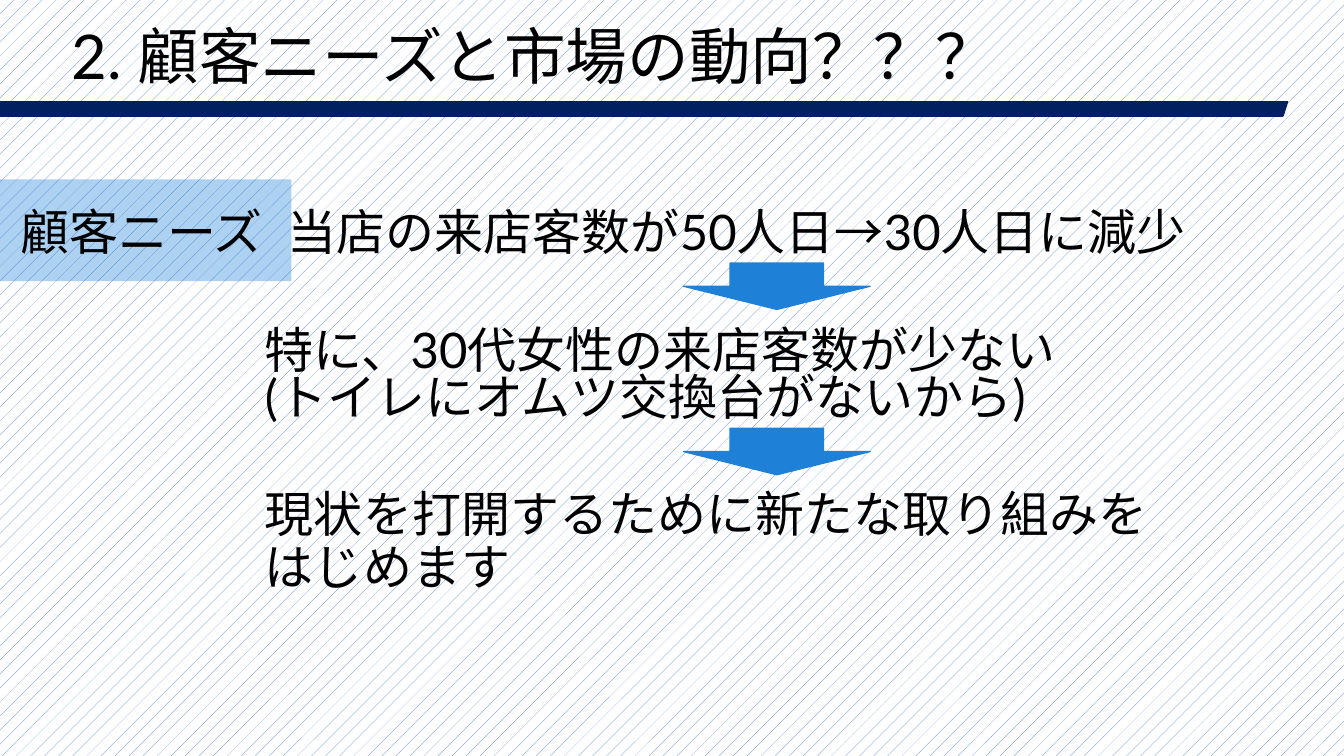
from lxml import etree
from pptx import Presentation
from pptx import util as u
from pptx.dml.color import RGBColor
from pptx.enum import dml, shapes, text
from pptx.oxml.ns import qn


def colour(hex_code):
    return RGBColor.from_string(hex_code)


class SlideBuilder:
    font = "Lato"
    ink = "000000"
    navy = "002060"
    blue = "1E80D7"

    def __init__(self, deck):
        self.slide = deck.slides.add_slide(deck.slide_layouts[5])

    def background(self, front, back):
        fill = self.slide.background.fill
        fill.patterned()
        fill.pattern = dml.MSO_PATTERN.PERCENT_5
        fill.fore_color.rgb = colour(front)
        fill.back_color.rgb = colour(back)

    def set_lines(self, box, lines, size, spacing):
        frame = box.text_frame
        frame.text = "\n".join(lines)
        frame.word_wrap = True
        frame.auto_size = text.MSO_AUTO_SIZE.NONE
        frame.vertical_anchor = text.MSO_ANCHOR.MIDDLE
        for para in frame.paragraphs:
            para.alignment = text.PP_ALIGN.LEFT
            para.line_spacing = spacing
            for span in para.runs:
                span.font.name = self.font
                span.font.size = u.Pt(size)
                span.font.color.rgb = colour(self.ink)

    def title(self, wording, left, top, width, height):
        box = self.slide.shapes.title
        box.left, box.top = u.Inches(left), u.Inches(top)
        box.width, box.height = u.Inches(width), u.Inches(height)
        self.set_lines(box, [wording], 44, 0.9)

    def text_box(self, lines, left, top, width, height, spacing=0.9):
        box = self.slide.shapes.add_textbox(
            u.Inches(left), u.Inches(top), u.Inches(width), u.Inches(height))
        self.set_lines(box, lines, 35, spacing)
        return box

    def tab_stop(self, box, inset, position):
        box.text_frame.margin_left = u.Inches(inset)
        properties = box.text_frame.paragraphs[0]._p.get_or_add_pPr()
        stops = etree.SubElement(properties, qn("a:tabLst"))
        etree.SubElement(stops, qn("a:tab"), pos=str(u.Inches(position)), algn="l")

    def shape(self, kind, fill, left, top, width, height, outlined=True):
        shape = self.slide.shapes.add_shape(
            kind, u.Inches(left), u.Inches(top), u.Inches(width), u.Inches(height))
        shape.shadow.inherit = False
        shape.fill.solid()
        shape.fill.fore_color.rgb = colour(fill)
        if outlined:
            shape.line.color.rgb = colour(fill)
            shape.line.width = u.Pt(1)
        else:
            shape.line.fill.background()
        return shape

    def transparency(self, shape, opacity):
        tint = shape._element.spPr.find(qn("a:solidFill"))[0]
        etree.SubElement(tint, qn("a:alpha"), val=str(opacity * 1000))


def main():
    deck = Presentation()
    deck.slide_width, deck.slide_height = u.Inches(13.33), u.Inches(7.5)
    page = SlideBuilder(deck)
    kinds = shapes.MSO_SHAPE

    page.background("4472C4", "FFFFFF")
    label = page.shape(kinds.RECTANGLE, page.blue, 0, 1.78, 2.89, 1.01, outlined=False)
    page.transparency(label, 36)

    page.title("2. 顧客ニーズと市場の動向？？？", 0.61, 0.18, 11.5, 0.83)
    page.shape(kinds.RECTANGLE, page.navy, 0, 1.01, 12.72, 0.14)
    tip = page.shape(kinds.ISOSCELES_TRIANGLE, page.navy, 12.68, 1.01, 0.09, 0.14)
    tip.rotation = 180

    needs = page.text_box(
        ["顧客ニーズ\t当店の来店客数が50人日→30人日に減少"], 0, 1.78, 13.33, 1.1)
    page.tab_stop(needs, 0.2, 2.65)
    page.text_box(
        ["特に、30代女性の来店客数が少ない", "(トイレにオムツ交換台がないから)"],
        2.53, 3.2, 10.8, 1.1, spacing=0.8)
    page.text_box(
        ["現状を打開するために新たな取り組みを", "はじめます"], 2.53, 4.62, 10.8, 1.53)

    for top in (2.61, 4.25):
        page.shape(kinds.DOWN_ARROW, page.blue, 6.78, top, 1.85, 0.46)

    deck.save("out.pptx")


if __name__ == "__main__":
    main()
